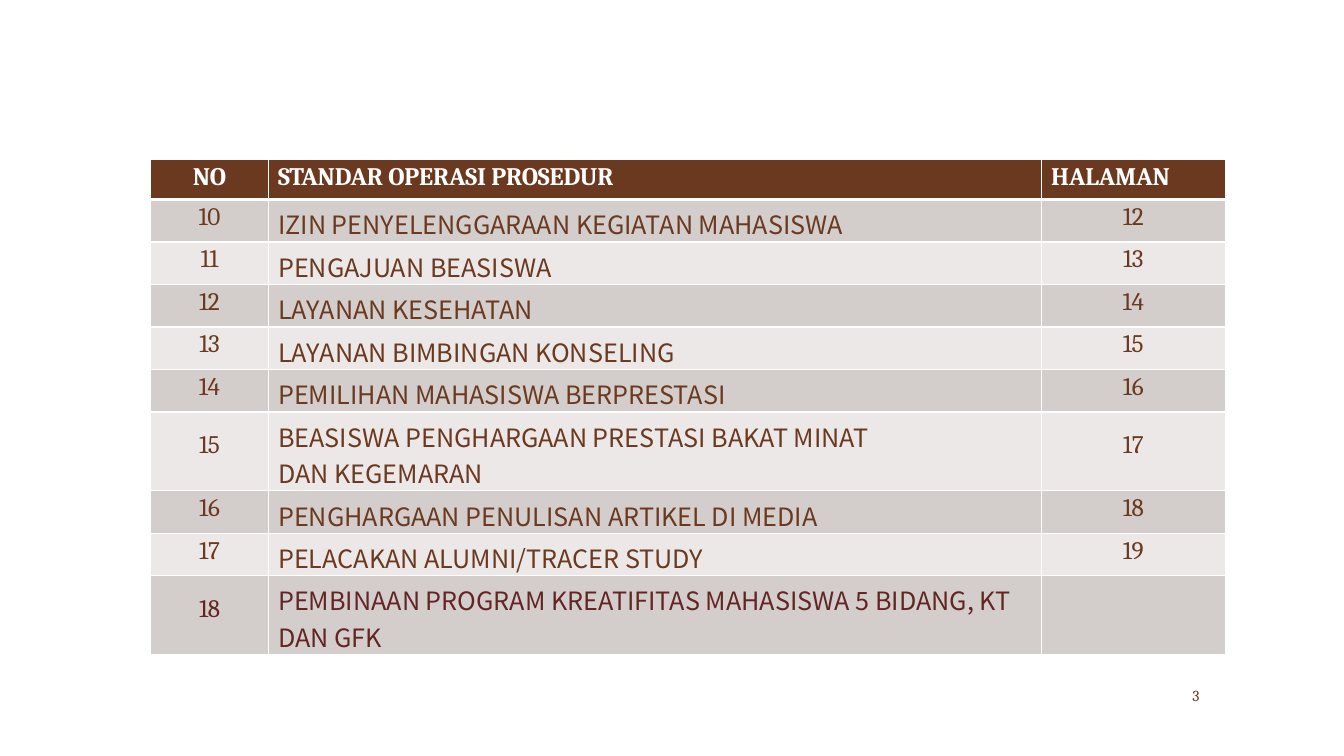
from lxml.etree import SubElement
from pptx import Presentation
from pptx.dml.color import RGBColor
from pptx.enum.text import PP_ALIGN
from pptx.oxml.ns import qn
from pptx.util import Cm, Pt

SERIF, SANS = "Cambria", "Noto Sans CJK JP"
WHITE, BROWN, MAROON = "FFFFFF", "6A391F", "632523"
BANDS = ("D3CECC", "EBE8E7")

HEADINGS = ("NO", "STANDAR OPERASI PROSEDUR", "HALAMAN")
PROCEDURES = [
    ("10", "IZIN PENYELENGGARAAN KEGIATAN MAHASISWA", "12"),
    ("11", "PENGAJUAN BEASISWA", "13"),
    ("12", "LAYANAN KESEHATAN", "14"),
    ("13", "LAYANAN BIMBINGAN KONSELING", "15"),
    ("14", "PEMILIHAN MAHASISWA BERPRESTASI", "16"),
    ("15", "BEASISWA PENGHARGAAN PRESTASI BAKAT MINAT DAN KEGEMARAN", "17"),
    ("16", "PENGHARGAAN PENULISAN ARTIKEL DI MEDIA", "18"),
    ("17", "PELACAKAN ALUMNI/TRACER STUDY", "19"),
    ("18", "PEMBINAAN PROGRAM KREATIFITAS MAHASISWA 5 BIDANG, KT DAN GFK", ""),
]
TWO_LINE = {"15", "18"}
PAGE_NUMBER = "3"

COLUMN_WIDTHS = (2.96, 19.48, 4.64)
ROW_HEIGHT, TALL_HEIGHT = 1.02, 1.78
TEXT_INDENT = 0.25


def color(value):
    return RGBColor.from_string(value)


def write(frame, text, font=SERIF, size=18, fill=BROWN, bold=False,
          align=PP_ALIGN.LEFT, spacing=0):
    para = frame.paragraphs[0]
    para.alignment = align
    if not text:
        para.font.size = Pt(size)
        return
    span = para.add_run()
    span.text = text
    span.font.name, span.font.size, span.font.bold = font, Pt(size), bold
    span.font.color.rgb = color(fill)
    if spacing:
        span.font._element.set("spc", str(round(spacing * 100)))


def set_margins(target, left=0, top=0, right=0):
    target.margin_left, target.margin_top = Cm(left), Cm(top)
    target.margin_right, target.margin_bottom = Cm(right), Cm(0)


def add_borders(cell, top=1, bottom=1):
    """Draw white borders, with widths in points; call before filling the cell."""
    properties = cell._tc.get_or_add_tcPr()
    for tag, width in (("lnL", 1), ("lnR", 1), ("lnT", top), ("lnB", bottom)):
        line = SubElement(properties, qn(f"a:{tag}"), w=str(Pt(width)))
        fill = SubElement(line, qn("a:solidFill"))
        SubElement(fill, qn("a:srgbClr"), val=WHITE)


def fill_cell(cell, background):
    cell.fill.solid()
    cell.fill.fore_color.rgb = color(background)


def add_procedure_table(page):
    heights = [ROW_HEIGHT] + [
        TALL_HEIGHT if number in TWO_LINE else ROW_HEIGHT
        for number, _, _ in PROCEDURES
    ]
    table = page.shapes.add_table(
        len(heights), len(COLUMN_WIDTHS), Cm(3.8), Cm(4.01),
        Cm(sum(COLUMN_WIDTHS)), Cm(sum(heights))).table
    for column, width in zip(table.columns, COLUMN_WIDTHS):
        column.width = Cm(width)
    for row, height in zip(table.rows, heights):
        row.height = Cm(height)

    for index, text in enumerate(HEADINGS):
        cell = table.cell(0, index)
        set_margins(cell, left=TEXT_INDENT if index else 0, top=0.08)
        add_borders(cell, bottom=3)
        fill_cell(cell, BROWN)
        write(cell.text_frame, text, fill=WHITE, bold=True, spacing=-0.1,
              align=PP_ALIGN.LEFT if index else PP_ALIGN.CENTER)

    for row, (number, name, halaman) in enumerate(PROCEDURES, start=1):
        ink = MAROON if number == "18" else BROWN
        number_top = 0.47 if number in TWO_LINE else 0.08
        for index, text in enumerate((number, name, halaman)):
            cell = table.cell(row, index)
            add_borders(cell, top=3 if row == 1 else 1)
            fill_cell(cell, BANDS[(row - 1) % 2])
            if index == 1:
                set_margins(cell, left=TEXT_INDENT, top=0.15,
                            right=3.7 if number == "15" else 0)
                write(cell.text_frame, text, font=SANS, fill=ink)
            else:
                set_margins(cell, top=number_top)
                write(cell.text_frame, text, fill=ink, spacing=-0.2,
                      align=PP_ALIGN.CENTER)


def add_page_number(page):
    box = page.shapes.add_textbox(Cm(30.02), Cm(17.27), Cm(0.25), Cm(0.53))
    frame = box.text_frame
    frame.word_wrap = True
    set_margins(frame, left=0.03, top=0.03)
    write(frame, PAGE_NUMBER, size=11, spacing=-0.5)


def main():
    deck = Presentation()
    deck.slide_width, deck.slide_height = Cm(33.87), Cm(19.05)
    page = deck.slides.add_slide(deck.slide_layouts[6])
    add_procedure_table(page)
    add_page_number(page)
    deck.save("out.pptx")


if __name__ == "__main__":
    main()
